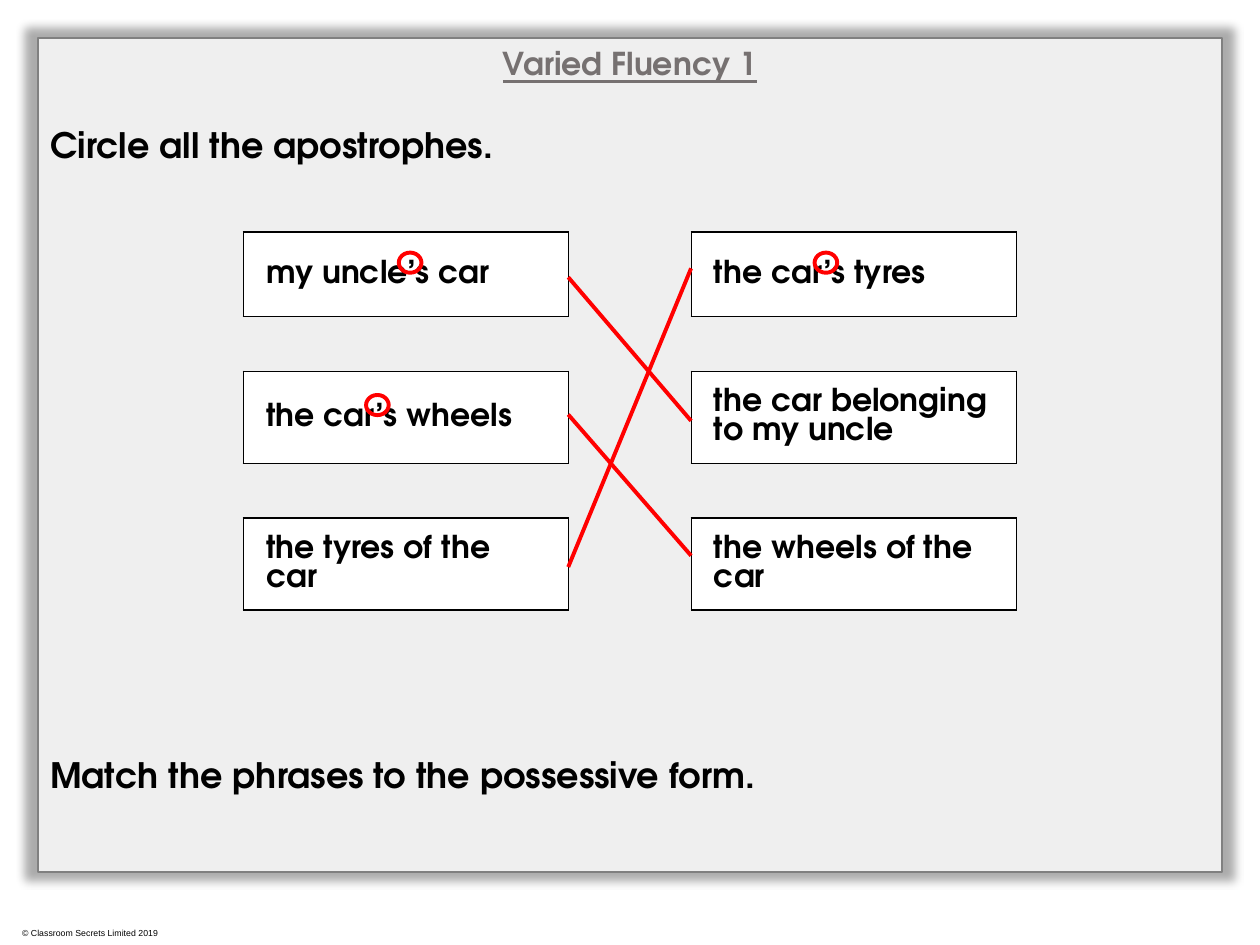
from lxml.etree import SubElement
from pptx import Presentation
from pptx.dml.color import RGBColor
from pptx.enum.shapes import MSO_CONNECTOR, MSO_SHAPE
from pptx.enum.text import MSO_ANCHOR, MSO_AUTO_SIZE, PP_ALIGN
from pptx.oxml import parse_xml
from pptx.oxml.ns import nsdecls, qn
from pptx.util import Inches, Pt

COLUMNS, ROWS = 100, 75
SLIDE_WIDTH, SLIDE_HEIGHT = Inches(10), Inches(7.5)
COLORS = {"ink": "000000", "paper": "FFFFFF", "title": "767171",
          "edge": "808080", "answer": "FF0000"}
BODY_FONT = "TeX Gyre Adventor"
PLAIN_TABLE_STYLE = "{2D5ABB26-0587-4C30-8999-92F81FD0307C}"

PHRASES = [("my uncle’s car", "the car’s tyres"),
           ("the car’s wheels", "the car belonging to my uncle"),
           ("the tyres of the car", "the wheels of the car")]
PHRASE_WIDTHS = [25.8, 9.75, 25.8]
PHRASE_HEIGHTS = [6.7, 4.35, 7.3, 4.35, 7.3]
APOSTROPHES = [(31.65, 20.05), (29.05, 31.35), (64.65, 20.05)]
MATCHES = [(22, 33.4), (32.9, 44.1), (45, 21.3)]
MATCH_LEFT, MATCH_RIGHT = 45.1, 54.85


def across(columns):
    return round(SLIDE_WIDTH * columns / COLUMNS)


def down(rows):
    return round(SLIDE_HEIGHT * rows / ROWS)


def place(left, top, width, height):
    return across(left), down(top), across(width), down(height)


def color(name):
    return RGBColor.from_string(COLORS[name])


def write(frame, text, size=18, ink="ink", font=BODY_FONT, bold=True,
          underline=False, align=PP_ALIGN.LEFT):
    paragraph = frame.paragraphs[0]
    paragraph.alignment = align
    run = paragraph.add_run()
    run.text = text
    run.font.name = font
    run.font.size = Pt(size)
    run.font.bold = bold
    run.font.underline = underline
    run.font.color.rgb = color(ink)


def clear_frame(frame, anchor=MSO_ANCHOR.TOP):
    frame.word_wrap = True
    frame.auto_size = MSO_AUTO_SIZE.NONE
    frame.vertical_anchor = anchor
    frame.margin_left = frame.margin_right = 0
    frame.margin_top = frame.margin_bottom = 0


def draw_borders(cell, sides):
    properties = cell._tc.get_or_add_tcPr()
    for index, side in enumerate(sides):
        properties.insert(index, parse_xml(
            f'<a:ln{side} {nsdecls("a")} w="12700"><a:solidFill>'
            f'<a:srgbClr val="{COLORS["ink"]}"/></a:solidFill></a:ln{side}>'))


class Worksheet:
    """Holds the current slide and draws each kind of element in its style."""

    def __init__(self, presentation):
        self.slide = presentation.slides.add_slide(presentation.slide_layouts[5])
        self.shapes = self.slide.shapes

    def panel(self, *box):
        """Draw the translucent sheet with a soft shadow all round."""
        sheet = self.shapes.add_shape(MSO_SHAPE.RECTANGLE, *place(*box))
        sheet.fill.solid()
        sheet.fill.fore_color.rgb = color("paper")
        sheet.line.color.rgb = color("edge")
        sheet.line.width = Pt(1)
        sheet.shadow.inherit = False
        properties = sheet._element.spPr
        tint = properties.find(qn("a:solidFill")).find(qn("a:srgbClr"))
        SubElement(tint, qn("a:alpha"), val="82000")
        shadow = SubElement(properties.find(qn("a:effectLst")), qn("a:outerShdw"),
                            blurRad=str(Pt(5)), dist="0", dir="0", sx="102000",
                            sy="102000", algn="ctr", rotWithShape="0")
        shade = SubElement(shadow, qn("a:srgbClr"), val=COLORS["ink"])
        SubElement(shade, qn("a:alpha"), val="40000")

    def title(self, text, *box):
        heading = self.shapes.title
        heading.left, heading.top, heading.width, heading.height = place(*box)
        clear_frame(heading.text_frame)
        write(heading.text_frame, text, ink="title", underline=True,
              align=PP_ALIGN.CENTER)
        # The heading has to lie in front of the panel.
        self.shapes._spTree.append(heading._element)

    def text(self, text, *box, anchor=MSO_ANCHOR.TOP, **style):
        frame = self.shapes.add_textbox(*place(*box)).text_frame
        clear_frame(frame, anchor)
        write(frame, text, **style)

    def phrase_table(self, left, top):
        """Lay phrases in every second row and column, with gaps between."""
        box = place(left, top, sum(PHRASE_WIDTHS), sum(PHRASE_HEIGHTS))
        table = self.shapes.add_table(
            len(PHRASE_HEIGHTS), len(PHRASE_WIDTHS), *box).table
        table.first_row = table.horz_banding = False
        table._tbl.tblPr.find(qn("a:tableStyleId")).text = PLAIN_TABLE_STYLE
        for column, width in zip(table.columns, PHRASE_WIDTHS):
            column.width = across(width)
        for row, height in zip(table.rows, PHRASE_HEIGHTS):
            row.height = down(height)
        for r in range(len(PHRASE_HEIGHTS)):
            for c in range(len(PHRASE_WIDTHS)):
                cell = table.cell(r, c)
                in_row, in_column = r % 2 == 0, c % 2 == 0
                if in_row and in_column:
                    self.phrase(cell, PHRASES[r // 2][c // 2])
                else:
                    cell.fill.background()
                    cell.text_frame.paragraphs[0].font.size = Pt(10)
                draw_borders(cell, "LR" * in_row + "TB" * in_column)

    def phrase(self, cell, text):
        cell.fill.solid()
        cell.fill.fore_color.rgb = color("paper")
        cell.vertical_anchor = MSO_ANCHOR.MIDDLE
        cell.margin_left = cell.margin_right = across(1.8)
        cell.margin_top = cell.margin_bottom = down(0.7)
        write(cell.text_frame, text)

    def answer_line(self, outline):
        outline.color.rgb = color("answer")
        outline.width = Pt(2.25)

    def ring(self, left, top):
        circle = self.shapes.add_shape(MSO_SHAPE.OVAL, *place(left, top, 1.8, 1.6))
        circle.fill.background()
        self.answer_line(circle.line)
        circle.shadow.inherit = False

    def match(self, start_row, end_row):
        link = self.shapes.add_connector(
            MSO_CONNECTOR.STRAIGHT, across(MATCH_LEFT), down(start_row),
            across(MATCH_RIGHT), down(end_row))
        self.answer_line(link.line)
        SubElement(link._element.spPr, qn("a:effectLst"))


def main():
    presentation = Presentation()
    presentation.slide_width = SLIDE_WIDTH
    presentation.slide_height = SLIDE_HEIGHT
    sheet = Worksheet(presentation)
    sheet.text("© Classroom Secrets Limited 2019", 1.75, 73.1, 12, 1.9,
               anchor=MSO_ANCHOR.MIDDLE, size=5, font="Arial", bold=False)
    sheet.panel(3, 3, 94, 66.2)
    sheet.title("Varied Fluency 1", 4, 3.5, 92, 4)
    sheet.text("Circle all the apostrophes.", 4, 9.8, 92, 4, size=20)
    sheet.text("Match the phrases to the possessive form.", 4, 59.8, 92, 4, size=20)
    sheet.phrase_table(19.32, 18.43)
    for left, top in APOSTROPHES:
        sheet.ring(left, top)
    for start_row, end_row in MATCHES:
        sheet.match(start_row, end_row)
    presentation.save("out.pptx")


if __name__ == "__main__":
    main()
